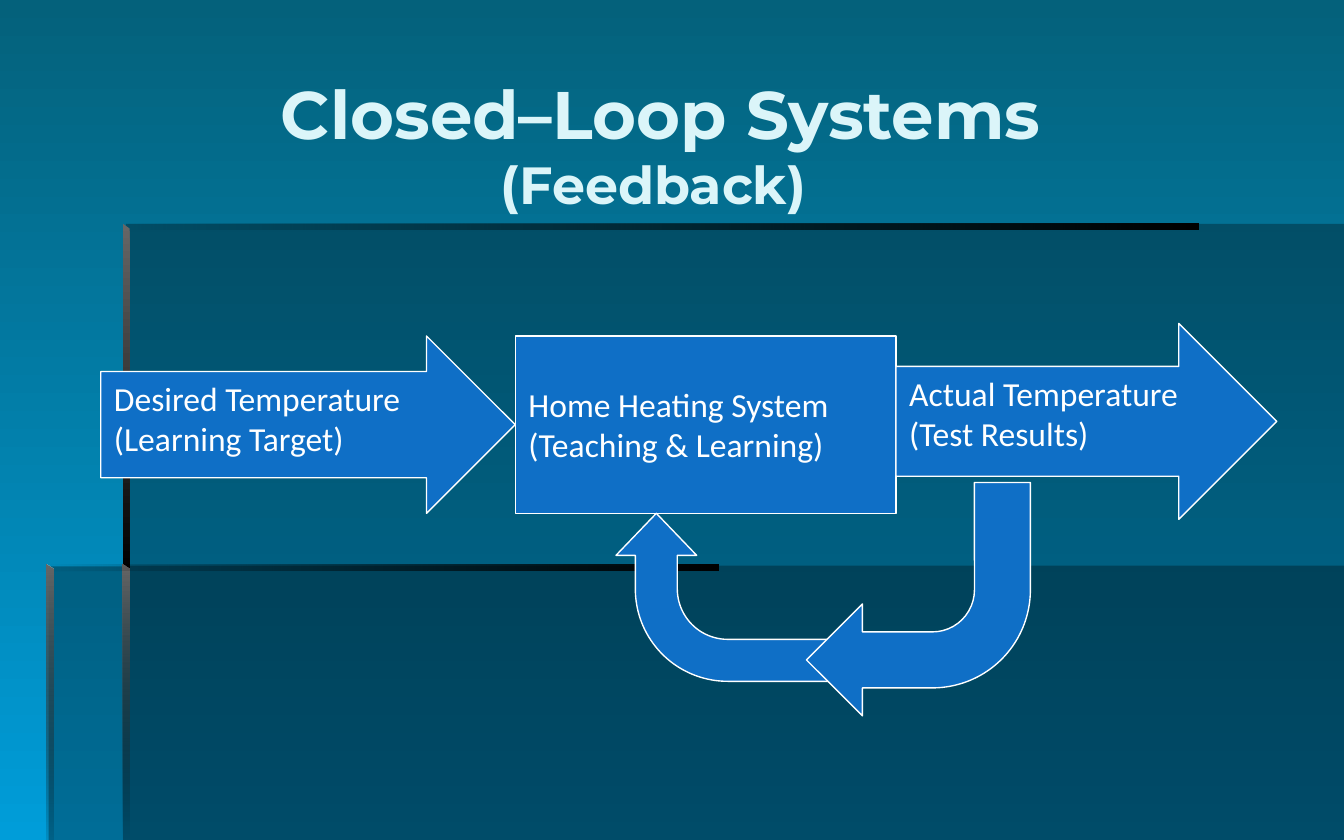
from dataclasses import dataclass
from typing import Any, Optional

import lxml.etree
import pptx
import pptx.dml.color
import pptx.enum.shapes
import pptx.enum.text
import pptx.oxml.ns
import pptx.util

Pt = pptx.util.Pt
Shape = pptx.enum.shapes.MSO_SHAPE
Anchor = pptx.enum.text.MSO_ANCHOR
Align = pptx.enum.text.PP_ALIGN


@dataclass(frozen=True)
class Theme:
    sky_top: str = "04617B"
    sky_bottom: str = "009DD9"
    shade: str = "000000"
    ridge: str = "666666"
    block: str = "0F6FC6"
    outline: str = "FFFFFF"
    title: str = "DBF5F9"
    title_font: str = "Montserrat"
    body_font: str = "Calibri"
    title_size: float = 36
    subtitle_size: float = 28
    body_size: float = 18
    outline_width: float = 0.75


@dataclass(frozen=True)
class Tint:
    color: str
    opacity: int = 100


@dataclass(frozen=True)
class Backdrop:
    """A filled outline: one tint is solid, two make a gradient."""
    points: tuple[tuple[float, float], ...]
    tints: tuple[Tint, ...]
    angle: int = 0


@dataclass(frozen=True)
class Block:
    kind: Any
    box: tuple[float, float, float, float]
    lines: tuple[str, ...] = ()
    adjustments: tuple[float, ...] = ()
    rotation: float = 0
    top_inset: float = 3.6


THEME = Theme()
WIDTH, HEIGHT = 720, 450
DOWN = 270  # gradient angles run counter-clockwise

# Backdrop geometry
LEFT, INNER = 25, 66
UPPER, LOWER = 120, 302.5
BEVEL = 3.5
SOLID, CLEAR = Tint(THEME.shade), Tint(THEME.shade, 0)
RIDGE, VEIL = Tint(THEME.ridge), Tint(THEME.shade, 30)


def ledge(left: float, top: float, length: float) -> Backdrop:
    right, bottom = left + length, top + 3
    corners = ((left, top), (left, bottom), (right, bottom), (right, top))
    return Backdrop(corners, (CLEAR, SOLID))


def post(left: float, top: float, bottom: float, end: Tint) -> Backdrop:
    right = left + BEVEL
    corners = ((left, top), (left, bottom), (right, bottom), (right, top + 2.5))
    return Backdrop(corners, (RIDGE, end), DOWN)


BACKDROPS = (
    Backdrop(((INNER, 303), (INNER, HEIGHT), (WIDTH, HEIGHT), (WIDTH, 303)), (VEIL,)),
    Backdrop(((67.5, 303.5), (26, 303.5), (26, HEIGHT), (WIDTH, HEIGHT),
              (WIDTH, UPPER), (67.5, UPPER)), (VEIL,)),
    ledge(INNER, UPPER, 576),
    post(INNER, UPPER, 306, SOLID),
    post(65.75, LOWER, HEIGHT, CLEAR),
    ledge(LEFT, LOWER, 360),
    post(LEFT, LOWER, HEIGHT, Tint(THEME.shade, 10)),
)

# The loop: input, process, output and the two feedback arrows
BLOCKS = (
    Block(Shape.RECTANGLE, (276, 180, 204, 95),
          ("Home Heating System", "(Teaching & Learning)"), top_inset=25.5),
    Block(Shape.RIGHT_ARROW, (54, 180, 222, 95),
          ("Desired Temperature", "(Learning Target)"), (0.6, 0.5)),
    Block(Shape.BENT_ARROW, (345, 260, 90, 120),
          adjustments=(0.25, 0.24, 0.25, 0.55), rotation=270),
    Block(Shape.BENT_ARROW, (432, 258.5, 120, 125), rotation=180),
    Block(Shape.RIGHT_ARROW, (480, 173.25, 204, 105),
          ("Actual Temperature", "(Test Results)"), (0.56, 0.5)),
)


def rgb(color: str) -> pptx.dml.color.RGBColor:
    return pptx.dml.color.RGBColor.from_string(color)


def apply(target: Any, values: dict[str, Any]) -> None:
    for name, value in values.items():
        setattr(target, name, value)


def paint(fill: Any, tints: tuple[Tint, ...], angle: int = 0) -> None:
    if len(tints) == 1:
        fill.solid()
        fill.fore_color.rgb = rgb(tints[0].color)
        return
    fill.gradient()
    fill.gradient_angle = angle
    for stop, tint in zip(fill.gradient_stops, tints):
        stop.color.rgb = rgb(tint.color)


def set_opacity(shape: Any, tints: tuple[Tint, ...]) -> None:
    qn = pptx.oxml.ns.qn
    for color, tint in zip(shape._element.spPr.iter(qn("a:srgbClr")), tints):
        if tint.opacity < 100:
            lxml.etree.SubElement(color, qn("a:alpha"), val=str(tint.opacity * 1000))


def draw_backdrop(slide: Any, backdrop: Backdrop) -> None:
    corners = [(Pt(x), Pt(y)) for x, y in backdrop.points]
    builder = slide.shapes.build_freeform(*corners[0])
    builder.add_line_segments(corners[1:], close=True)
    panel = builder.convert_to_shape()
    panel.shadow.inherit = False
    panel.line.fill.background()
    paint(panel.fill, backdrop.tints, backdrop.angle)
    set_opacity(panel, backdrop.tints)


def add_text(paragraph: Any, text: str, font: str, size: float, color: str,
             bold: Optional[bool] = None) -> None:
    run = paragraph.add_run()
    run.text = text
    apply(run.font, {"name": font, "size": Pt(size), "bold": bold})
    run.font.color.rgb = rgb(color)


def draw_block(slide: Any, block: Block) -> None:
    part = slide.shapes.add_shape(block.kind, *map(Pt, block.box))
    part.shadow.inherit = False
    part.rotation = block.rotation
    for index, value in enumerate(block.adjustments):
        part.adjustments[index] = value
    paint(part.fill, (Tint(THEME.block),))
    part.line.color.rgb = rgb(THEME.outline)
    part.line.width = Pt(THEME.outline_width)
    frame = part.text_frame
    apply(frame, {"word_wrap": True, "vertical_anchor": Anchor.TOP,
                  "margin_top": Pt(block.top_inset)})
    for index, line in enumerate(block.lines):
        paragraph = frame.add_paragraph() if index else frame.paragraphs[0]
        paragraph.alignment = Align.LEFT
        add_text(paragraph, line, THEME.body_font, THEME.body_size, THEME.outline)


def draw_title(slide: Any) -> None:
    heading = slide.shapes.add_textbox(Pt(66), Pt(30), Pt(576), Pt(94))
    frame = heading.text_frame
    apply(frame, {"word_wrap": True, "vertical_anchor": Anchor.MIDDLE})
    paragraph = frame.paragraphs[0]
    paragraph.alignment = Align.CENTER
    add_text(paragraph, "Closed–Loop Systems", THEME.title_font,
             THEME.title_size, THEME.title, True)
    paragraph.add_line_break()
    add_text(paragraph, "(Feedback) ", THEME.title_font,
             THEME.subtitle_size, THEME.title, True)


def main() -> None:
    deck = pptx.Presentation()
    apply(deck, {"slide_width": Pt(WIDTH), "slide_height": Pt(HEIGHT)})
    slide = deck.slides.add_slide(deck.slide_layouts[6])
    paint(slide.background.fill, (Tint(THEME.sky_top), Tint(THEME.sky_bottom)), DOWN)
    for backdrop in BACKDROPS:
        draw_backdrop(slide, backdrop)
    draw_title(slide)
    for block in BLOCKS:
        draw_block(slide, block)
    deck.save("out.pptx")


if __name__ == "__main__":
    main()
